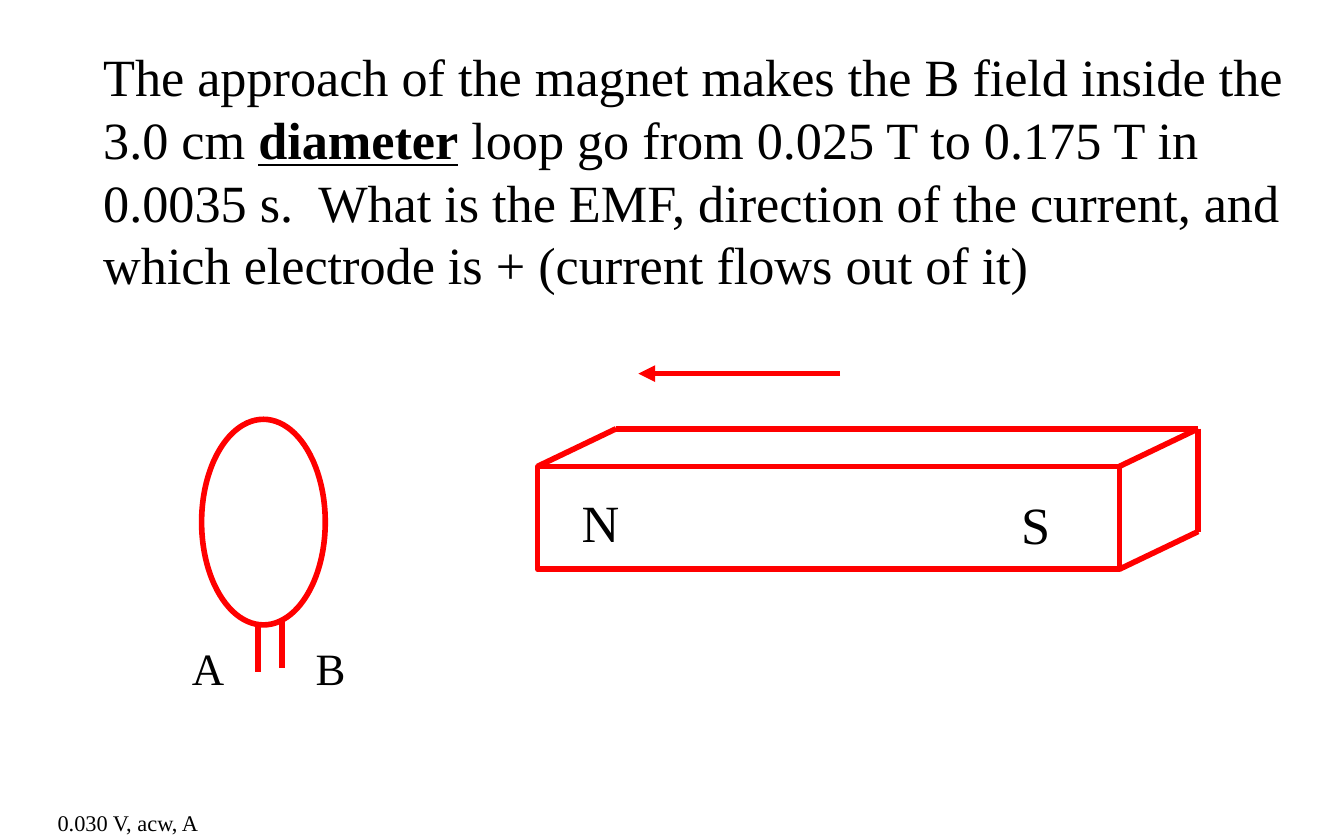
from lxml.etree import SubElement
from pptx import Presentation
from pptx.dml.color import RGBColor
from pptx.enum.shapes import MSO_CONNECTOR, MSO_SHAPE
from pptx.enum.text import MSO_AUTO_SIZE
from pptx.oxml.ns import qn
from pptx.util import Inches, Pt

WIDTH, HEIGHT = 10, 6.25
FONT = "Times New Roman"
COLORS = {"text": "000000", "line": "FF0000"}
LINE_WIDTH = 3

# All places are percentages of the slide's width and height.
QUESTION = [
    ("The approach of the magnet makes the B field inside the 3.0 cm ", False),
    ("diameter", True),
    (" loop go from 0.025 T to 0.175 T in 0.0035 s.  What is the EMF, direction of "
     "the current, and which electrode is + (current flows out of it)", False),
]
QUESTION_PLACE = (6.7, 4.48, 90, 31.84)
LABELS = [  # text, size, place
    ("0.030 V, acw, A", 12, (3.3, 95.52, 12.6, 4.8)),
    ("N", 28, (42.3, 57.6, 4.9, 9.12)),
    ("S", 28, (75, 57.76, 4.2, 9.12)),
    ("A", 24, (13.3, 75.52, 4.5, 8)),
    ("B", 24, (22.5, 75.52, 4.3, 8)),
]
MAGNET_FRONT = (40, 55.52, 43.3, 12.24)
MAGNET_DEPTH = (5.85, -4.48)
LOOP = (15, 49.92, 9.2, 24.48)
MOTION = ((62.5, 44.48), (47.5, 44.48))
LEAD_TOPS = [(19.2, 74.4), (21, 73.92)]
LEAD_LENGTH = 5.6


def across(share):
    return Inches(WIDTH * share / 100)


def down(share):
    return Inches(HEIGHT * share / 100)


def to_slide(place):
    left, top, width, height = place
    return across(left), down(top), across(width), down(height)


def style_line(line):
    line.color.rgb = RGBColor.from_string(COLORS["line"])
    line.width = Pt(LINE_WIDTH)


def add_text(page, spans, size, place, wrap=False):
    """Add a text box of (text, emphasized) spans."""
    box = page.shapes.add_textbox(*to_slide(place))
    frame = box.text_frame
    frame.word_wrap = wrap
    frame.auto_size = MSO_AUTO_SIZE.SHAPE_TO_FIT_TEXT
    para = frame.paragraphs[0]
    for text, emphasized in spans:
        span = para.add_run()
        span.text = text
        font = span.font
        font.name, font.size = FONT, Pt(size)
        font.bold = font.underline = emphasized
        font.color.rgb = RGBColor.from_string(COLORS["text"])


def add_outline(page, preset, place):
    shape = page.shapes.add_shape(preset, *to_slide(place))
    shape.shadow.inherit = False
    shape.fill.background()
    style_line(shape.line)


def add_line(page, start, end, arrow=False):
    line = page.shapes.add_connector(
        MSO_CONNECTOR.STRAIGHT,
        across(start[0]), down(start[1]), across(end[0]), down(end[1]))
    style_line(line.line)
    if arrow:
        SubElement(line.line._get_or_add_ln(), qn("a:tailEnd"), type="triangle")
    SubElement(line._element.spPr, qn("a:effectLst"))


def add_magnet(page):
    """Draw the front face, then the edges that run back from its corners."""
    add_outline(page, MSO_SHAPE.RECTANGLE, MAGNET_FRONT)
    left, top, width, height = MAGNET_FRONT
    right, bottom = left + width, top + height
    corners = [(left, top), (right, top), (right, bottom)]
    back = [(x + MAGNET_DEPTH[0], y + MAGNET_DEPTH[1]) for x, y in corners]
    for start, end in [*zip(corners, back), *zip(back, back[1:])]:
        add_line(page, start, end)


def main():
    deck = Presentation()
    deck.slide_width, deck.slide_height = Inches(WIDTH), Inches(HEIGHT)
    page = deck.slides.add_slide(deck.slide_layouts[6])

    add_text(page, QUESTION, 28, QUESTION_PLACE, wrap=True)
    add_magnet(page)
    add_outline(page, MSO_SHAPE.OVAL, LOOP)
    add_line(page, *MOTION, arrow=True)
    for x, y in LEAD_TOPS:
        add_line(page, (x, y), (x, y + LEAD_LENGTH))
    for text, size, place in LABELS:
        add_text(page, [(text, False)], size, place)

    deck.save("out.pptx")


if __name__ == "__main__":
    main()
